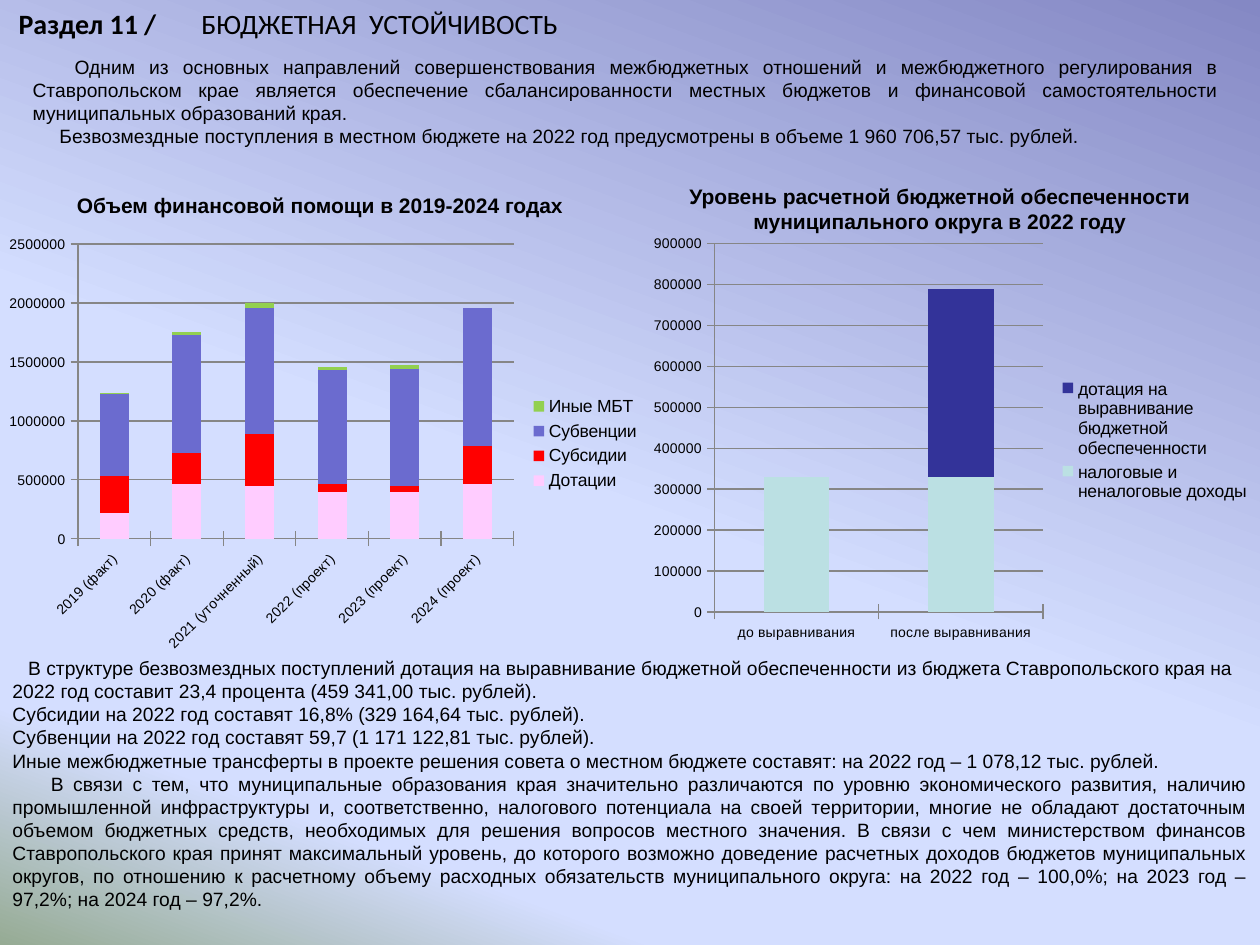
from dataclasses import dataclass

from lxml import etree
from pptx import Presentation
from pptx.chart.data import CategoryChartData
from pptx.dml.color import RGBColor
from pptx.enum.chart import XL_CHART_TYPE, XL_LEGEND_POSITION, XL_TICK_MARK
from pptx.enum.text import MSO_AUTO_SIZE, PP_ALIGN
from pptx.oxml.ns import qn
from pptx.util import Pt

STACKED = XL_CHART_TYPE.COLUMN_STACKED
LEGEND_RIGHT = XL_LEGEND_POSITION.RIGHT
CROSS = XL_TICK_MARK.CROSS
LEFT, CENTER, JUSTIFY = PP_ALIGN.LEFT, PP_ALIGN.CENTER, PP_ALIGN.JUSTIFY
FIT = MSO_AUTO_SIZE.SHAPE_TO_FIT_TEXT

Box = tuple[float, float, float, float]


@dataclass(frozen=True)
class Theme:
    heading_font: str = "Calibri"
    font: str = "Arial"
    heading: float = 16
    chart_title: float = 12
    body: float = 11
    legend: float = 10
    axis: float = 8
    text: str = "000000"
    grid: str = "868686"
    background: tuple = ((0, "8488C4"), (53, "D4DEFF"), (83, "D4DEFF"), (100, "96AB94"))
    background_angle: float = 250


@dataclass(frozen=True)
class Run:
    text: str
    size: float
    bold: bool = False
    font: str = "Arial"


@dataclass(frozen=True)
class Para:
    runs: tuple[Run, ...]
    align: PP_ALIGN = LEFT
    indent: float = 0
    tab: float = 0


@dataclass(frozen=True)
class Series:
    name: str
    values: tuple
    color: str


@dataclass(frozen=True)
class StackedChart:
    box: Box
    categories: tuple[str, ...]
    series: tuple[Series, ...]
    maximum: int
    step: int
    plot: Box  # fractions of the chart area
    legend: Box
    label_rotation: int = 0


THEME = Theme()


def rgb(value: str) -> RGBColor:
    return RGBColor.from_string(value)


def set_background(slide) -> None:
    fill = slide.background.fill
    fill.gradient()
    fill.gradient_angle = THEME.background_angle
    stops = slide.element.find(".//" + qn("a:gsLst"))
    for old in list(stops):
        stops.remove(old)
    for percent, color in THEME.background:
        stop = etree.SubElement(stops, qn("a:gs"), pos=str(percent * 1000))
        etree.SubElement(stop, qn("a:srgbClr"), val=color)


def add_text(slide, box: Box, paras: list[Para]) -> None:
    tf = slide.shapes.add_textbox(*map(Pt, box)).text_frame
    tf.word_wrap = True
    tf.auto_size = FIT
    for i, para in enumerate(paras):
        p = tf.paragraphs[0] if i == 0 else tf.add_paragraph()
        p.alignment = para.align
        props = p._p.get_or_add_pPr()
        if para.indent:
            props.set("indent", str(Pt(para.indent)))
        if para.tab:
            tabs = etree.SubElement(props, qn("a:tabLst"))
            etree.SubElement(tabs, qn("a:tab"), pos=str(Pt(para.tab)), algn="l")
        for run in para.runs:
            r = p.add_run()
            r.text = run.text
            r.font.name, r.font.size, r.font.bold = run.font, Pt(run.size), run.bold
            r.font.color.rgb = rgb(THEME.text)


def set_layout(parent, index: int, box: Box, inner: bool = False) -> None:
    old = parent.find(qn("c:layout"))
    if old is not None:
        parent.remove(old)
    layout = etree.Element(qn("c:layout"))
    parent.insert(index, layout)
    manual = etree.SubElement(layout, qn("c:manualLayout"))
    if inner:
        etree.SubElement(manual, qn("c:layoutTarget"), val="inner")
    for mode in ("xMode", "yMode"):
        etree.SubElement(manual, qn("c:" + mode), val="edge")
    for key, value in zip("xywh", box):
        etree.SubElement(manual, qn("c:" + key), val=str(value))


def style_font(font, size: float) -> None:
    font.name, font.size = THEME.font, Pt(size)
    font.color.rgb = rgb(THEME.text)


def add_chart(slide, spec_: StackedChart) -> None:
    data = CategoryChartData()
    data.categories = spec_.categories
    for s in spec_.series:
        data.add_series(s.name, s.values)
    chart = slide.shapes.add_chart(STACKED, *map(Pt, spec_.box), data).chart
    chart.has_title = False
    style_font(chart.font, THEME.axis)

    # Columns
    plot = chart.plots[0]
    plot.gap_width, plot.overlap, plot.vary_by_categories = 150, 100, False
    for drawn, s in zip(plot.series, spec_.series):
        drawn.format.fill.solid()
        drawn.format.fill.fore_color.rgb = rgb(s.color)

    # Axes
    cat, val = chart.category_axis, chart.value_axis
    for axis in (cat, val):
        axis.major_tick_mark = CROSS
        axis.format.line.color.rgb = rgb(THEME.grid)
        style_font(axis.tick_labels.font, THEME.axis)
    val.minimum_scale, val.maximum_scale, val.major_unit = 0, spec_.maximum, spec_.step
    val.major_gridlines.format.line.color.rgb = rgb(THEME.grid)
    if spec_.label_rotation:
        body = cat._element.find(".//" + qn("a:bodyPr"))
        body.set("rot", str(spec_.label_rotation * 60000))

    # Legend and placement
    chart.has_legend = True
    legend = chart.legend
    legend.position, legend.include_in_layout = LEGEND_RIGHT, False
    style_font(legend.font, THEME.legend)
    set_layout(legend._element, 1, spec_.legend)
    set_layout(chart._chartSpace.find(".//" + qn("c:plotArea")), 0, spec_.plot, True)


def body(text: str, align: PP_ALIGN = LEFT, indent: float = 0) -> Para:
    return Para((Run(text, THEME.body),), align, indent)


def chart_title(text: str) -> Para:
    return Para((Run(text, THEME.chart_title, True),), CENTER)


HEADING = Para((Run("Раздел 11 /\t", THEME.heading, True, THEME.heading_font),
                Run("БЮДЖЕТНАЯ  УСТОЙЧИВОСТЬ", THEME.heading, False, THEME.heading_font)),
               indent=3.6, tab=251.6)
INTRO = [
    body("Одним из основных направлений совершенствования межбюджетных отношений и межбюджетного регулирования в Ставропольском крае является обеспечение сбалансированности местных бюджетов и финансовой самостоятельности муниципальных образований края.", JUSTIFY, 24),
    body("Безвозмездные поступления в местном бюджете на 2022 год предусмотрены в объеме 1 960 706,57 тыс. рублей.", JUSTIFY, 15.4),
]
DETAILS = [
    body("В структуре безвозмездных поступлений дотация на выравнивание бюджетной обеспеченности из бюджета Ставропольского края на 2022 год составит 23,4 процента (459 341,00 тыс. рублей).", indent=9),
    body("Субсидии на 2022 год составят 16,8% (329 164,64 тыс. рублей)."),
    body("Субвенции на 2022 год составят 59,7 (1 171 122,81 тыс. рублей)."),
    body("Иные межбюджетные трансферты в проекте решения совета о местном бюджете составят: на 2022 год – 1 078,12 тыс. рублей."),
    body("В связи с тем, что муниципальные образования края значительно различаются по уровню экономического развития, наличию промышленной инфраструктуры и, соответственно, налогового потенциала на своей территории, многие не обладают достаточным объемом бюджетных средств, необходимых для решения вопросов местного значения. В связи с чем министерством финансов Ставропольского края принят максимальный уровень, до которого возможно доведение расчетных доходов бюджетов муниципальных округов, по отношению к расчетному объему расходных обязательств муниципального округа: на 2022 год – 100,0%; на 2023 год – 97,2%; на 2024 год – 97,2%.", JUSTIFY, 22),
]
AID = StackedChart(
    (0, 129.6, 371.5, 247.7),
    ("2019 (факт)", "2020 (факт)", "2021 (уточненный)",
     "2022 (проект)", "2023 (проект)", "2024 (проект)"),
    (Series("Дотации", (220000, 460000, 450000, 400000, 400000, 460000), "FFCCFF"),
     Series("Субсидии", (310000, 270000, 440000, 60000, 50000, 330000), "FF0000"),
     Series("Субвенции", (700000, 1000000, 1070000, 970000, 990000, 1170000), "6B6BCF"),
     Series("Иные МБТ", (10000, 20000, 40000, 30000, 30000, 0), "92D050")),
    2500000, 500000, (0.12, 0.04, 0.67, 0.68), (0.81, 0.38, 0.18, 0.24), -45)
PROVISION = StackedChart(
    (365.8, 129.6, 354.2, 241.9), ("до выравнивания", "после выравнивания"),
    (Series("налоговые и неналоговые доходы", (330000, 330000), "BBE0E3"),
     Series("дотация на выравнивание бюджетной обеспеченности", (None, 460000), "333399")),
    900000, 100000, (0.12, 0.04, 0.53, 0.87), (0.67, 0.35, 0.32, 0.31))


def main() -> None:
    prs = Presentation()
    prs.slide_width, prs.slide_height = Pt(720), Pt(540)
    slide = prs.slides.add_slide(prs.slide_layouts[6])
    set_background(slide)
    add_text(slide, (0, 0, 720, 26.6), [HEADING])
    add_text(slide, (11.5, 28.1, 691.9, 60.5), INTRO)
    add_chart(slide, AID)
    add_text(slide, (0, 371.5, 720, 167), DETAILS)
    add_text(slide, (0, 106.6, 365.8, 21.6),
             [chart_title("Объем финансовой помощи в 2019-2024 годах")])
    add_text(slide, (354.2, 101.5, 365.8, 36),
             [chart_title("Уровень расчетной бюджетной обеспеченности муниципального округа в 2022 году")])
    add_chart(slide, PROVISION)
    prs.save("out.pptx")


if __name__ == "__main__":
    main()
